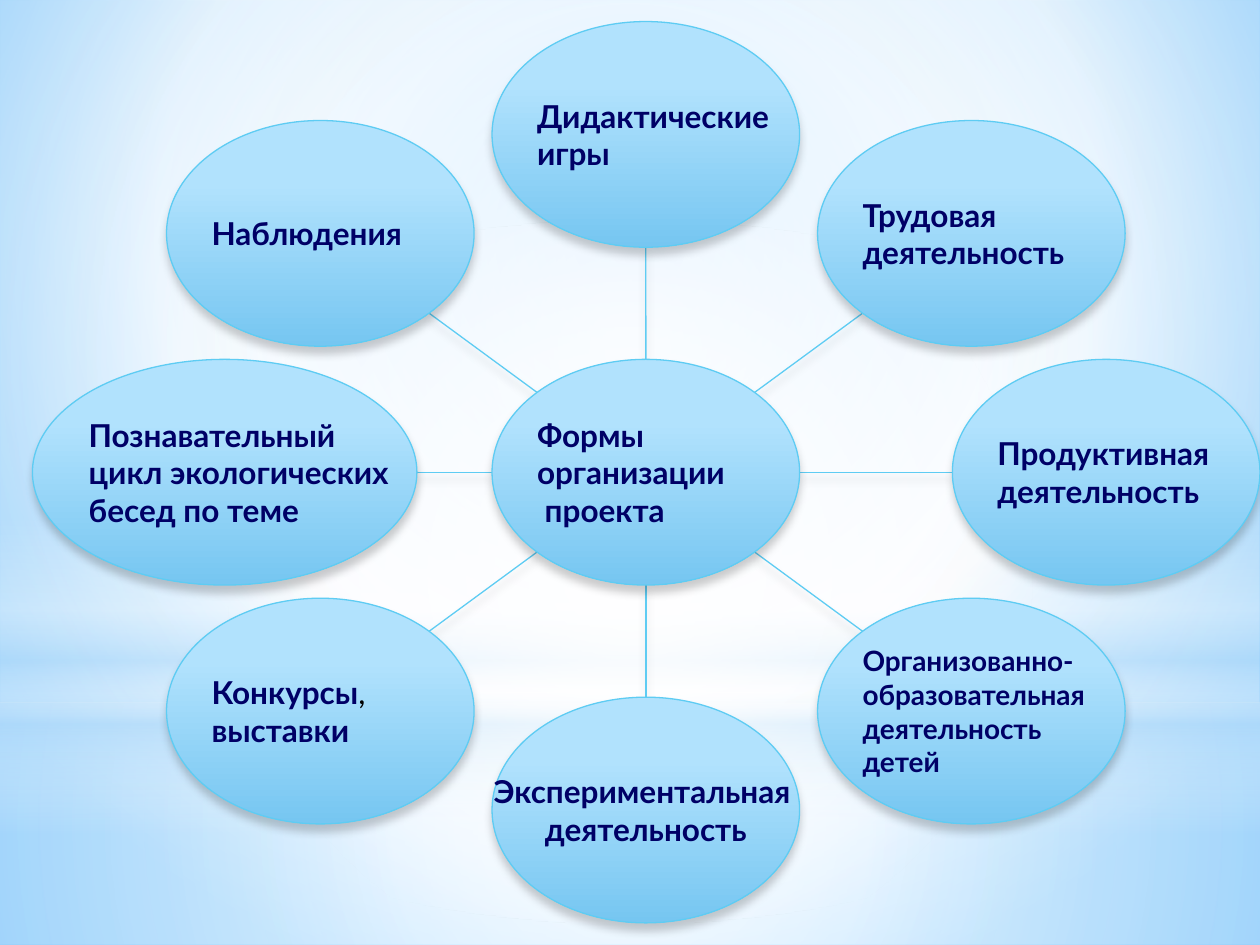
"""Draw a ring of eight project activities around a central oval."""
from math import cos, radians, sin

from lxml.etree import SubElement
from pptx import Presentation
from pptx.dml.color import RGBColor
from pptx.enum.shapes import MSO_CONNECTOR, MSO_SHAPE
from pptx.enum.text import MSO_ANCHOR, PP_ALIGN
from pptx.oxml.ns import qn
from pptx.util import Cm, Pt

WHITE = RGBColor(0xFF, 0xFF, 0xFF)
BLACK = RGBColor(0, 0, 0)
NAVY = RGBColor(0, 0, 0x66)
CYAN = RGBColor(0x5E, 0xCC, 0xF3)
PALE = RGBColor(0xB4, 0xDC, 0xFA)
LIGHT = RGBColor(0xB1, 0xE2, 0xFD)
BLUE = RGBColor(0x76, 0xC6, 0xF1)
SKY = RGBColor(0x9E, 0xD5, 0xFF)
DEEP = RGBColor(0x5B, 0xB9, 0xFF)

WIDE, HIGH = 25.4, 19.05
MID_X, MID_Y = 13.02, 9.52
RING_X, RING_Y = 9.28, 6.81
OVAL_W, OVAL_H = 6.2, 4.55
LEFT_W, LEFT_X = 7.75, 4.53
CENTER = (50, 50, 50, 50)
BACK = [(0, SKY, 100), (60, WHITE, 100), (100, DEEP, 100)]
LAYERS = [
    (MSO_SHAPE.RECTANGLE, 14.17, 4.88, CENTER,
     [(0, WHITE, 91), (37, WHITE, 76), (100, PALE, 79)]),
    (MSO_SHAPE.RECTANGLE, 0, 14.17, CENTER,
     [(0, WHITE, 89), (48, WHITE, 62), (100, PALE, 79)]),
    (MSO_SHAPE.RECTANGLE, 10.46, 6.35, None,
     [(0, WHITE, 0), (29, WHITE, 30), (45, PALE, 40),
      (55, WHITE, 26), (65, PALE, 60), (100, WHITE, 0)]),
    (MSO_SHAPE.OVAL, 4.45, 14.17, CENTER, [(0, WHITE, 100), (56, WHITE, 0)]),
]
GLOSS = [(28, LIGHT, 100), (100, BLUE, 100)]
NODES = [
    (225, ["Наблюдения"]),
    (180, ["Познавательный", "цикл экологических", "бесед по теме"]),
    (135, ["Конкурсы", "выставки"]),
    (90, ["Экспериментальная ", "деятельность"]),
    (45, ["Организованно-", "образовательная", "деятельность", "детей"]),
    (0, ["Продуктивная", "деятельность"]),
    (315, ["Трудовая", "деятельность"]),
    (270, ["Дидактические", "игры"]),
]
HUB = ["Формы", "организации", " проекта"]


def tint(parent, color, alpha):
    """Add a colour with its opacity in percent."""
    node = SubElement(parent, qn("a:srgbClr"), val=str(color))
    SubElement(node, qn("a:alpha"), val=str(alpha * 1000))


def blend(owner, stops, focus=None):
    """Turn the owner's solid fill into a round or downward gradient."""
    solid = owner.xpath(".//a:solidFill")[0]
    grad = SubElement(solid.getparent(), qn("a:gradFill"), rotWithShape="1")
    solid.getparent().replace(solid, grad)
    row = SubElement(grad, qn("a:gsLst"))
    for place, color, alpha in stops:
        tint(SubElement(row, qn("a:gs"), pos=str(place * 1000)), color, alpha)
    if focus:
        round_fill = SubElement(grad, qn("a:path"), path="circle")
        sides = {side: str(part * 1000) for side, part in zip("ltrb", focus)}
        SubElement(round_fill, qn("a:fillToRect"), sides)
    else:
        SubElement(grad, qn("a:lin"), ang="5400000", scaled="0")


def shade(props):
    """Add a soft shadow below an element."""
    for old in props.findall(qn("a:effectLst")):
        props.remove(old)
    effects = SubElement(props, qn("a:effectLst"))
    drop = SubElement(effects, qn("a:outerShdw"), blurRad=str(Pt(5)),
                      dist=str(Pt(4)), dir="5400000", rotWithShape="0")
    tint(drop, BLACK, 20)


def outline(item):
    """Give an element its thin cyan line and shadow."""
    item.line.color.rgb = CYAN
    item.line.width = Pt(0.75)
    shade(item._element.spPr)


def form(slide, kind, box, stops, focus=None):
    """Add a plain shape with a gradient fill."""
    shape = slide.shapes.add_shape(kind, *map(Cm, box))
    shape.shadow.inherit = False
    shape.fill.solid()
    blend(shape._element.spPr, stops, focus)
    shape.line.fill.background()
    return shape


def write(para, text, size=18, color=NAVY, bold=True):
    """Add a styled run to a paragraph."""
    run = para.add_run()
    run.text = text
    for name, value in {"name": "Lato", "size": Pt(size), "bold": bold}.items():
        setattr(run.font, name, value)
    run.font.color.rgb = color


def oval(slide, x, y, lines, width=OVAL_W, size=18, align=PP_ALIGN.LEFT):
    """Add a labelled oval around a centre point and return its text frame."""
    box = (x - width / 2, y - OVAL_H / 2, width, OVAL_H)
    shape = form(slide, MSO_SHAPE.OVAL, box, GLOSS)
    outline(shape)
    frame = shape.text_frame
    setup = {"margin_left": 0, "margin_top": 0, "margin_right": 0,
             "margin_bottom": 0, "word_wrap": False,
             "vertical_anchor": MSO_ANCHOR.MIDDLE}
    for name, value in setup.items():
        setattr(frame, name, value)
    for index, line in enumerate(lines):
        para = frame.add_paragraph() if index else frame.paragraphs[0]
        para.alignment = align
        write(para, line, size)
    return frame


def spoke(slide, angle):
    """Join the hub's rim to the rim of the node at an angle."""
    dx, dy = cos(radians(angle)), sin(radians(angle))
    near_x, near_y = OVAL_W / 2, OVAL_H / 2
    ends = (MID_X + near_x * dx, MID_Y + near_y * dy,
            MID_X + (RING_X - near_x) * dx, MID_Y + (RING_Y - near_y) * dy)
    outline(slide.shapes.add_connector(MSO_CONNECTOR.STRAIGHT, *map(Cm, ends)))


def main():
    """Build and save the slide."""
    deck = Presentation()
    deck.slide_width, deck.slide_height = Cm(WIDE), Cm(HIGH)
    slide = deck.slides.add_slide(deck.slide_layouts[6])
    slide.background.fill.solid()
    blend(slide._element, BACK, (20, 10, 20, 60))
    for kind, top, height, focus, stops in LAYERS:
        form(slide, kind, (0, top, WIDE, height), stops, focus)
    special = {180: {"width": LEFT_W}, 90: {"align": PP_ALIGN.CENTER},
               45: {"size": 16}}
    for angle, lines in NODES:
        spoke(slide, angle)
        x = LEFT_X if angle == 180 else MID_X + RING_X * cos(radians(angle))
        y = MID_Y + RING_Y * sin(radians(angle))
        frame = oval(slide, x, y, lines, **special.get(angle, {}))
        if angle == 135:
            write(frame.paragraphs[0], ",", color=BLACK, bold=False)
    oval(slide, MID_X, MID_Y, HUB)
    deck.save("out.pptx")


if __name__ == "__main__":
    main()
